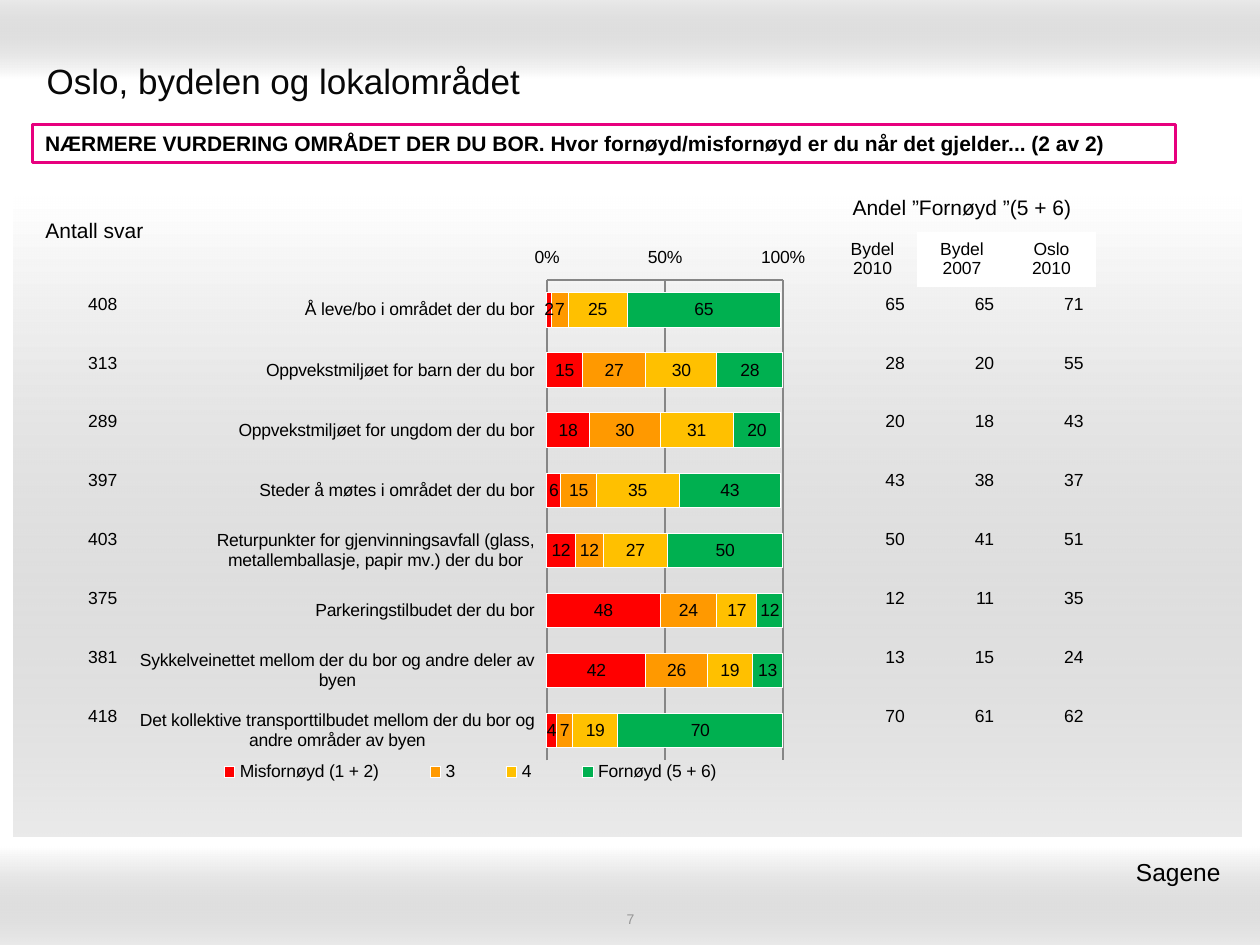
from lxml import etree
from pptx import Presentation
from pptx.chart.data import CategoryChartData
from pptx.dml.color import RGBColor
from pptx.enum.chart import XL_CHART_TYPE, XL_LEGEND_POSITION, XL_TICK_LABEL_POSITION, XL_TICK_MARK
from pptx.enum.shapes import MSO_SHAPE
from pptx.enum.text import MSO_ANCHOR, PP_ALIGN
from pptx.oxml.ns import qn
from pptx.util import Inches, Pt

LEFT, CENTER, RIGHT = PP_ALIGN.LEFT, PP_ALIGN.CENTER, PP_ALIGN.RIGHT
MIDDLE = MSO_ANCHOR.MIDDLE
LOW = XL_TICK_LABEL_POSITION.LOW
TICK_NONE, TICK_INSIDE = XL_TICK_MARK.NONE, XL_TICK_MARK.INSIDE
NO_STYLE = "{2D5ABB26-0587-4C30-8999-92F81FD0307C}"
COLORS = {
    "white": "FFFFFF", "black": "000000", "title": "080808", "shade": "999999",
    "number": "969696", "pink": "E7007E", "grid": "868686",
    "red": "FF0000", "orange": "FF9900", "yellow": "FFC000", "green": "00B050",
}

CATEGORIES = [
    "Å leve/bo i området der du bor",
    "Oppvekstmiljøet for barn der du bor",
    "Oppvekstmiljøet for ungdom der du bor",
    "Steder å møtes i området der du bor",
    "Returpunkter for gjenvinningsavfall (glass, metallemballasje, papir mv.) der du bor",
    "Parkeringstilbudet der du bor",
    "Sykkelveinettet mellom der du bor og andre deler av byen",
    "Det kollektive transporttilbudet mellom der du bor og andre områder av byen",
]
SERIES = [
    ("Misfornøyd (1 + 2)", "red", [2, 15, 18, 6, 12, 48, 42, 4]),
    ("3", "orange", [7, 27, 30, 15, 12, 24, 26, 7]),
    ("4", "yellow", [25, 30, 31, 35, 27, 17, 19, 19]),
    ("Fornøyd (5 + 6)", "green", [65, 28, 20, 43, 50, 12, 13, 70]),
]
RESPONSES = [408, 313, 289, 397, 403, 375, 381, 418]
SATISFIED = [
    [65, 65, 71], [28, 20, 55], [20, 18, 43], [43, 38, 37],
    [50, 41, 51], [12, 11, 35], [13, 15, 24], [70, 61, 62],
]
ROW_H, COL_W = 3.74 / 8, 0.71


def rgb(name):
    return RGBColor.from_string(COLORS[name])


class SlideBuilder:
    def __init__(self, slide, font="Arial"):
        self.slide = slide
        self.font = font

    def style(self, font, size, color="black", bold=False):
        values = {"name": self.font, "size": Pt(size), "bold": bold}
        for key, value in values.items():
            setattr(font, key, value)
        font.color.rgb = rgb(color)

    def fill_text(self, tf, text, size, align=LEFT, color="black", bold=False):
        for i, line in enumerate(text.split("\n")):
            p = tf.paragraphs[0] if i == 0 else tf.add_paragraph()
            p.alignment = align
            r = p.add_run()
            r.text = line
            self.style(r.font, size, color, bold)

    def fill_box(self, sp, *args, **kwargs):
        sp.text_frame.word_wrap = True
        sp.text_frame.vertical_anchor = MIDDLE
        self.fill_text(sp.text_frame, *args, **kwargs)

    def title(self, text, box):
        sp = self.slide.shapes.title
        sp.left, sp.top, sp.width, sp.height = map(Inches, box)
        self.fill_box(sp, text, 20, color="title")

    def rect(self, box):
        sp = self.slide.shapes.add_shape(MSO_SHAPE.RECTANGLE, *map(Inches, box))
        sp.shadow.inherit = False
        return sp

    def band(self, box, angle):
        sp = self.rect(box)
        sp.line.fill.background()
        sp.fill.gradient()
        sp.fill.gradient_angle = angle
        for stop, color in zip(sp.fill.gradient_stops, ("white", "shade")):
            stop.color.rgb = rgb(color)
        shade = list(sp._element.iter(qn("a:srgbClr")))[1]
        etree.SubElement(shade, qn("a:alpha"), val="20000")
        self.slide.shapes.title._element.addprevious(sp._element)

    def banner(self, text, box):
        sp = self.rect(box)
        sp.fill.solid()
        sp.fill.fore_color.rgb = rgb("white")
        sp.line.color.rgb = rgb("pink")
        sp.line.width = Pt(2)
        self.fill_box(sp, text, 12, bold=True)

    def text(self, text, box, size, align, color="black"):
        sp = self.slide.shapes.add_textbox(*map(Inches, box))
        self.fill_box(sp, text, size, align, color)

    def table(self, left, top, col_w, heights, rows, sizes, align, white=()):
        count = len(rows[0])
        frame = self.slide.shapes.add_table(
            len(rows), count, Inches(left), Inches(top),
            Inches(col_w * count), Inches(sum(heights)))
        table = frame.table
        table.first_row = table.horz_banding = False
        table._tbl.tblPr.find(qn("a:tableStyleId")).text = NO_STYLE
        for col in table.columns:
            col.width = Inches(col_w)
        for i, (row, height, size) in enumerate(zip(rows, heights, sizes)):
            table.rows[i].height = Inches(height)
            for j, value in enumerate(row):
                cell = table.cell(i, j)
                if (i, j) in white:
                    cell.fill.solid()
                    cell.fill.fore_color.rgb = rgb("white")
                else:
                    cell.fill.background()
                cell.vertical_anchor = MIDDLE
                if value != "":
                    self.fill_text(cell.text_frame, str(value), size, align)
        return table

    def place(self, parent, index, box):
        for old in parent.findall(qn("c:layout")):
            parent.remove(old)
        layout = etree.Element(qn("c:layout"))
        manual = etree.SubElement(layout, qn("c:manualLayout"))
        if index == 0:
            etree.SubElement(manual, qn("c:layoutTarget"), val="inner")
        for tag in ("xMode", "yMode"):
            etree.SubElement(manual, qn(f"c:{tag}"), val="edge")
        for tag, value in zip("xywh", box):
            etree.SubElement(manual, qn(f"c:{tag}"), val=str(value))
        parent.insert(index, layout)

    def stacked_bars(self, box):
        data = CategoryChartData(number_format="0")
        data.categories = CATEGORIES
        for name, _, values in SERIES:
            data.add_series(name, values)
        chart = self.slide.shapes.add_chart(
            XL_CHART_TYPE.BAR_STACKED, *map(Inches, box), data).chart
        self.style(chart.font, 10)
        chart.has_title = False
        plot = chart.plots[0]
        plot.gap_width, plot.overlap, plot.vary_by_categories = 75, 100, False
        for series, (_, color, _) in zip(plot.series, SERIES):
            series.format.fill.solid()
            series.format.fill.fore_color.rgb = rgb(color)
            series.format.line.color.rgb = rgb("white")
            labels = series.data_labels
            labels.show_value = True
            labels.number_format, labels.number_format_is_linked = "0", False
            self.style(labels.font, 10)
        cat, val = chart.category_axis, chart.value_axis
        cat.reverse_order = True
        cat.major_tick_mark, val.major_tick_mark = TICK_NONE, TICK_INSIDE
        val.minimum_scale, val.maximum_scale, val.major_unit = 0, 100, 50
        val.tick_labels.number_format = "General\\%"
        val.tick_labels.number_format_is_linked = False
        val.has_major_gridlines = True
        for axis in (cat, val):
            axis.tick_label_position = LOW
            axis.minor_tick_mark = TICK_NONE
        for part in (cat, val, val.major_gridlines):
            part.format.line.color.rgb = rgb("grid")
            part.format.line.width = Pt(0.75)
        chart.has_legend = True
        chart.legend.position = XL_LEGEND_POSITION.BOTTOM
        chart.legend.include_in_layout = False
        self.style(chart.legend.font, 10)
        self.place(chart._chartSpace.chart.plotArea, 0, (0.61, 0.08, 0.34, 0.84))
        self.place(chart.legend._element, 1, (0.08, 0.91, 0.84, 0.06))


def main():
    prs = Presentation()
    prs.slide_width, prs.slide_height = Inches(10), Inches(7.5)
    s = SlideBuilder(prs.slides.add_slide(prs.slide_layouts[5]))
    s.band((0, 0, 10, 0.62), 90)
    s.band((0, 6.72, 10, 0.78), 270)
    s.band((0.11, 1.56, 9.74, 5.08), 270)
    s.title("Oslo, bydelen og lokalområdet", (0.27, 0.36, 9.45, 0.55))
    s.text("7", (3.42, 7.22, 3.17, 0.14), 8, CENTER, "number")
    s.banner("NÆRMERE VURDERING OMRÅDET DER DU BOR. Hvor fornøyd/misfornøyd "
             "er du når det gjelder... (2 av 2)", (0.26, 0.99, 9.07, 0.3))
    s.stacked_bars((0.98, 1.86, 5.51, 4.54))
    s.table(6.57, 2.18, COL_W, [ROW_H] * 8, SATISFIED, [10] * 8, RIGHT)
    header = s.table(
        6.57, 1.47, COL_W, [0.37, 0.43],
        [["Andel ”Fornøyd ”(5 + 6)", "", ""], ["Bydel\n2010", "Bydel\n2007", "Oslo\n2010"]],
        [12, 10], CENTER, white=((1, 1), (1, 2)))
    header.cell(0, 0).merge(header.cell(0, 2))
    s.table(0.04, 1.54, 1.42, [0.59], [["Antall svar"]], [12], CENTER)
    s.text("Sagene ", (6.1, 6.75, 3.74, 0.34), 14, RIGHT)
    s.table(0.32, 2.18, COL_W, [ROW_H] * 8, [[n] for n in RESPONSES], [10] * 8, RIGHT)
    prs.save("out.pptx")


if __name__ == "__main__":
    main()
